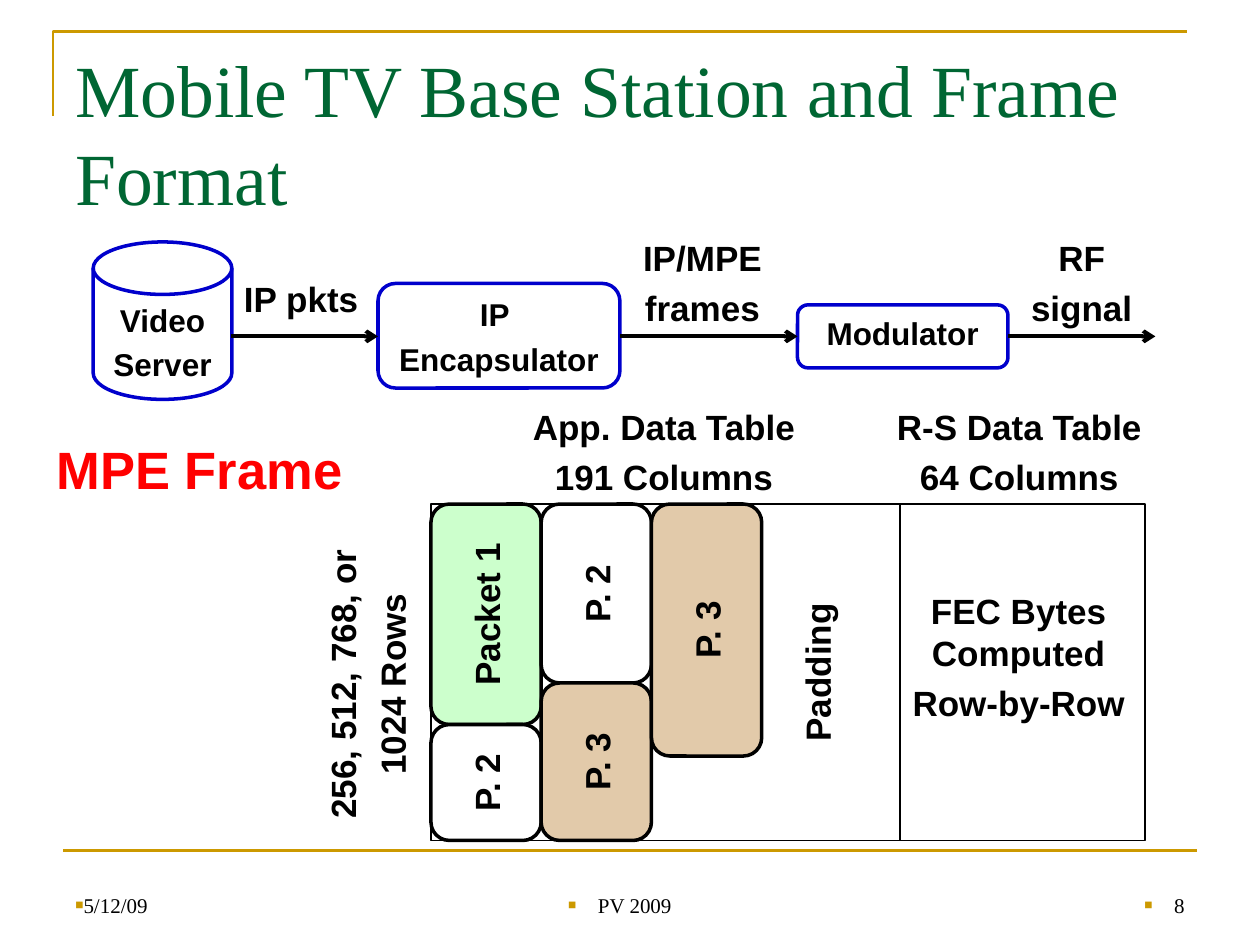
from lxml import etree
from pptx import Presentation
from pptx.dml.color import RGBColor
from pptx.enum.shapes import MSO_CONNECTOR, MSO_SHAPE
from pptx.enum.text import MSO_ANCHOR, PP_ALIGN
from pptx.oxml.ns import qn
from pptx.util import Inches, Pt

LEFT, CENTER, RIGHT = PP_ALIGN.LEFT, PP_ALIGN.CENTER, PP_ALIGN.RIGHT
TOP, MIDDLE, BOTTOM = MSO_ANCHOR.TOP, MSO_ANCHOR.MIDDLE, MSO_ANCHOR.BOTTOM
DISK = MSO_SHAPE.FLOWCHART_MAGNETIC_DISK
ROUNDED = MSO_SHAPE.FLOWCHART_ALTERNATE_PROCESS
PROCESS = MSO_SHAPE.FLOWCHART_PROCESS
STRAIGHT = MSO_CONNECTOR.STRAIGHT
GOLD, BLUE, BLACK, TAN = "CC9900", "0000CC", "000000", "E2CAAA"
rgb = RGBColor.from_string


def add_box(x, y, w, h, lines=(), size=20, color=BLACK, font="Arial", bold=True,
            align=CENTER, anchor=TOP, gap=0.22, wrap=True, kind=None,
            fill=None, line=None, weight=2, rotation=0):
    """Add a text box, or a preset shape if kind is given; gap is a share of size."""
    frame = Inches(x), Inches(y), Inches(w), Inches(h)
    if kind is None:
        s = shapes.add_textbox(*frame)
    else:
        s = shapes.add_shape(kind, *frame)
        s.shadow.inherit = False
        if fill:
            s.fill.solid()
            s.fill.fore_color.rgb = rgb(fill)
        else:
            s.fill.background()
        if line:
            s.line.color.rgb = rgb(line)
            s.line.width = Pt(weight)
        else:
            s.line.fill.background()
    s.rotation = rotation
    tf = s.text_frame
    tf.word_wrap = wrap
    tf.vertical_anchor = anchor
    for i, text in enumerate(lines):
        p = tf.add_paragraph() if i else tf.paragraphs[0]
        p.alignment = align
        p.space_before = Pt(round(size * gap, 1))
        r = p.add_run()
        r.text = text
        r.font.name = font
        r.font.size = Pt(size)
        r.font.bold = bold
        r.font.color.rgb = rgb(color)
    return s


def add_line(x1, x2, y, color, weight, arrow=False):
    s = shapes.add_connector(STRAIGHT, Inches(x1), Inches(y), Inches(x2), Inches(y))
    s.line.color.rgb = rgb(color)
    s.line.width = Pt(weight)
    if arrow:
        etree.SubElement(s.line._get_or_add_ln(), qn("a:tailEnd"), type="arrow")
    etree.SubElement(s._element.spPr, qn("a:effectLst"))


prs = Presentation()
prs.slide_width, prs.slide_height = Inches(10), Inches(7.5)
shapes = prs.slides.add_slide(prs.slide_layouts[6]).shapes

# Gold rules
builder = shapes.build_freeform(Inches(0.42), Inches(0.92))
builder.add_line_segments(
    [(Inches(0.42), Inches(0.25)), (Inches(9.42), Inches(0.25))], close=False)
s = builder.convert_to_shape()
s.shadow.inherit = False
s.fill.background()
s.line.color.rgb = rgb(GOLD)
s.line.width = Pt(1.5)
add_line(0.5, 9.5, 6.75, GOLD, 1.5)

# Title and heading
add_box(0.5, 0.3, 9, 1.25, ["Mobile TV Base Station and Frame Format"], size=42,
        color="006633", font="Times New Roman", bold=False, align=LEFT, gap=0)
add_box(0.25, 3.42, 2.67, 0.67, ["MPE Frame"], size=30, color="FF0000")

# Footer with square bullets
for x, w, text, align in [(0.5, 2.33, "5/12/09", LEFT),
                          (3.42, 3.17, "PV 2009", CENTER),
                          (7.17, 2.33, "8", RIGHT)]:
    s = add_box(x, 6.83, w, 0.5, [text], size=12, font="Times New Roman",
                bold=False, align=align, anchor=BOTTOM, gap=0)
    pPr = s.text_frame.paragraphs[0]._p.get_or_add_pPr()
    bullet_color = etree.SubElement(pPr, qn("a:buClr"))
    etree.SubElement(bullet_color, qn("a:srgbClr"), val=GOLD)
    etree.SubElement(pPr, qn("a:buSzPct"), val="65000")
    etree.SubElement(pPr, qn("a:buFont"), typeface="Arial")
    etree.SubElement(pPr, qn("a:buChar"), char="■")

# Base station chain
for kind, x, y, w, h, lines in [
        (DISK, 0.74, 1.92, 1.1, 1.25, ["Video", "Server"]),
        (ROUNDED, 3, 2.25, 1.92, 0.83, ["IP ", "Encapsulator"]),
        (ROUNDED, 6.33, 2.42, 1.67, 0.5, ["Modulator"])]:
    add_box(x, y, w, h, lines, size=18, kind=kind, line=BLUE)
for x1, x2 in [(1.83, 3), (4.92, 6.33), (8, 9.17)]:
    add_line(x1, x2, 2.67, BLACK, 2.25, arrow=True)

# MPE frame: application data table and R-S data table
frame_top, frame_h = 4, 2.67
for x, w in [(3.42, 3.72), (7.14, 1.95)]:
    add_box(x, frame_top, w, frame_h, kind=PROCESS, line=BLACK, weight=1)

# Labels
for x, y, w, h, lines, rotation in [
        (1.83, 2.15, 1.12, 0.44, ["IP pkts"], 0),
        (5, 1.83, 1.15, 0.84, ["IP/MPE", "frames"], 0),
        (8.08, 1.83, 1.01, 0.84, ["RF", "signal"], 0),
        (7.01, 3.17, 2.16, 0.84, ["R-S Data Table", "64 Columns"], 0),
        (4.12, 3.17, 2.3, 0.84, ["App. Data Table", "191 Columns"], 0),
        (1.74, 5.01, 2.36, 0.84, ["256, 512, 768, or", "1024 Rows"], 270)]:
    add_box(x, y, w, h, lines, wrap=False, rotation=rotation)

# Packets fill the columns from top to bottom, with their text turned upwards
column_w = 0.875
columns = [
    [("Packet 1", 1.75, "CCFFCC", BLACK), ("P. 2", 0.92, "FFFFFF", BLACK)],
    [("P. 2", 1.42, "FFFFFF", BLACK), ("P. 3", 1.25, TAN, BLACK)],
    [("P. 3", 2, TAN, BLACK)],
    [("Padding", frame_h, None, None)],
]
for i, packets in enumerate(columns):
    center_x = 3.42 + (i + 0.5) * column_w
    top = frame_top
    for text, length, fill, line in packets:
        add_box(center_x - length / 2, top + (length - column_w) / 2, length, column_w,
                [text], anchor=MIDDLE, kind=ROUNDED, fill=fill, line=line, rotation=270)
        top += length

add_box(7, 4.25, 2.17, 1.92, ["FEC Bytes Computed", "Row-by-Row"],
        anchor=MIDDLE, kind=ROUNDED)

prs.save("out.pptx")
